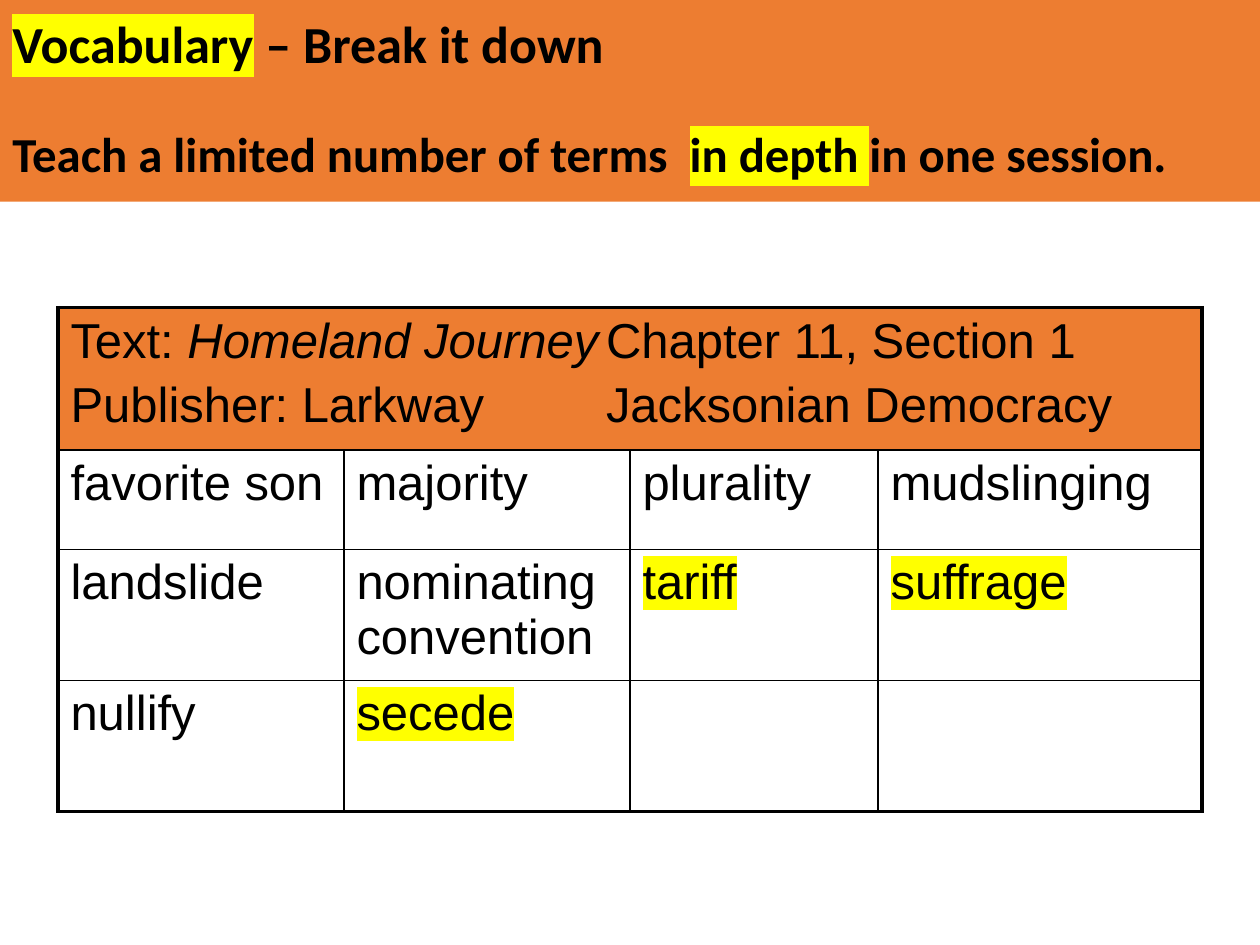
from dataclasses import dataclass

from lxml.etree import SubElement
from pptx import Presentation
from pptx.dml.color import RGBColor
from pptx.enum.shapes import MSO_SHAPE as Shape
from pptx.enum.text import MSO_ANCHOR as Anchor, PP_ALIGN as Align
from pptx.oxml import parse_xml
from pptx.oxml.ns import nsdecls, qn
from pptx.util import Inches, Pt

COLORS = {"band": "ED7D31", "ink": "000000", "mark": "FFFF00"}
TITLE = {"name": "Calibri", "bold": True}
BODY = {"name": "Arial", "size": Pt(28)}
COLUMNS = (2.27, 2.27, 1.97, 2.57)
ROWS = (1.13, 0.79, 1.04, 1.04)
TAB_STOP = 4.25


@dataclass(frozen=True)
class Run:
    text: str
    marked: bool = False
    italic: bool = False


HEADER = (
    (Run("Text: "), Run("Homeland Journey", italic=True), Run("\tChapter 11, Section 1")),
    (Run("Publisher: Larkway\tJacksonian Democracy"),),
)
TERMS = (
    (Run("favorite son"), Run("majority"), Run("plurality"), Run("mudslinging")),
    (Run("landslide"), Run("nominating convention"), Run("tariff", True), Run("suffrage", True)),
    (Run("nullify"), Run("secede", True), None, None),
)


def rgb(key: str) -> RGBColor:
    """Return a named colour."""
    return RGBColor.from_string(COLORS[key])


def add_run(p, run: Run, style: dict) -> None:
    """Append a styled run, highlighted if marked."""
    r = p.add_run()
    r.text = run.text
    for name, value in {**style, "italic": run.italic}.items():
        setattr(r.font, name, value)
    r.font.color.rgb = rgb("ink")
    if run.marked:
        mark = parse_xml(f'<a:highlight {nsdecls("a")}><a:srgbClr val="{COLORS["mark"]}"/></a:highlight>')
        r.font.fill._xPr.find(qn("a:solidFill")).addnext(mark)


def add_tab(p, position: float) -> None:
    """Give a paragraph one left tab stop."""
    tabs = SubElement(p._p.get_or_add_pPr(), qn("a:tabLst"))
    SubElement(tabs, qn("a:tab"), pos=str(Inches(position)), algn="l")


def set_borders(cell, widths: dict[str, float]) -> None:
    """Draw the cell's sides at the given widths in points."""
    tc_pr = cell._tc.get_or_add_tcPr()
    for i, (side, width) in enumerate(widths.items()):
        line = parse_xml(
            f'<a:ln{side} {nsdecls("a")} w="{Pt(width)}"><a:solidFill>'
            f'<a:srgbClr val="{COLORS["ink"]}"/></a:solidFill></a:ln{side}>'
        )
        tc_pr.insert(i, line)


def add_title(s) -> None:
    """Draw the title band with its two lines."""
    sp = s.shapes.add_shape(Shape.RECTANGLE, 0, 0, Inches(10), Inches(1.6))
    sp.shadow.inherit = False
    sp.fill.solid()
    sp.fill.fore_color.rgb = rgb("band")
    sp.line.fill.background()
    tf = sp.text_frame
    tf.word_wrap = True
    tf.vertical_anchor = Anchor.MIDDLE
    lines = (
        (29.7, 0, (Run("Vocabulary", True), Run(" – Break it down"))),
        (27.9, 32, (Run("Teach a limited number of terms  "), Run("in depth ", True), Run("in one session."))),
    )
    for i, (size, gap, runs) in enumerate(lines):
        p = tf.add_paragraph() if i else tf.paragraphs[0]
        for name, value in {"alignment": Align.LEFT, "line_spacing": 0.9, "space_before": Pt(gap)}.items():
            setattr(p, name, value)
        for run in runs:
            add_run(p, run, {**TITLE, "size": Pt(size)})


def add_terms(s) -> None:
    """Draw the table of vocabulary terms."""
    frame = s.shapes.add_table(
        len(ROWS), len(COLUMNS), Inches(0.46), Inches(2.44), Inches(sum(COLUMNS)), Inches(sum(ROWS))
    )
    table = frame.table
    table.first_row = table.horz_banding = False
    for column, width in zip(table.columns, COLUMNS):
        column.width = Inches(width)
    for row, height in zip(table.rows, ROWS):
        row.height = Inches(height)

    last_row, last_col = len(ROWS) - 1, len(COLUMNS) - 1
    for i in range(len(ROWS)):
        for j in range(len(COLUMNS)):
            cell = table.cell(i, j)
            if i == 0:
                cell.fill.solid()
                cell.fill.fore_color.rgb = rgb("band")
            else:
                cell.fill.background()
                run = TERMS[i - 1][j]
                if run:
                    add_run(cell.text_frame.paragraphs[0], run, BODY)
            outer = {"L": j == 0, "R": i == 0 or j == last_col, "T": i == 0, "B": i == last_row}
            set_borders(cell, {side: 2.25 if edge else 1 for side, edge in outer.items()})

    header = table.cell(0, 0)
    header.merge(table.cell(0, last_col))
    tf = header.text_frame
    for i, runs in enumerate(HEADER):
        p = tf.add_paragraph() if i else tf.paragraphs[0]
        p.space_before = Pt(5.6 * i)
        add_tab(p, TAB_STOP)
        for run in runs:
            add_run(p, run, BODY)


def main() -> None:
    """Build and save the slide."""
    prs = Presentation()
    prs.slide_width, prs.slide_height = Inches(10), Inches(7.5)
    s = prs.slides.add_slide(prs.slide_layouts[6])
    add_title(s)
    add_terms(s)
    prs.save("out.pptx")


if __name__ == "__main__":
    main()
